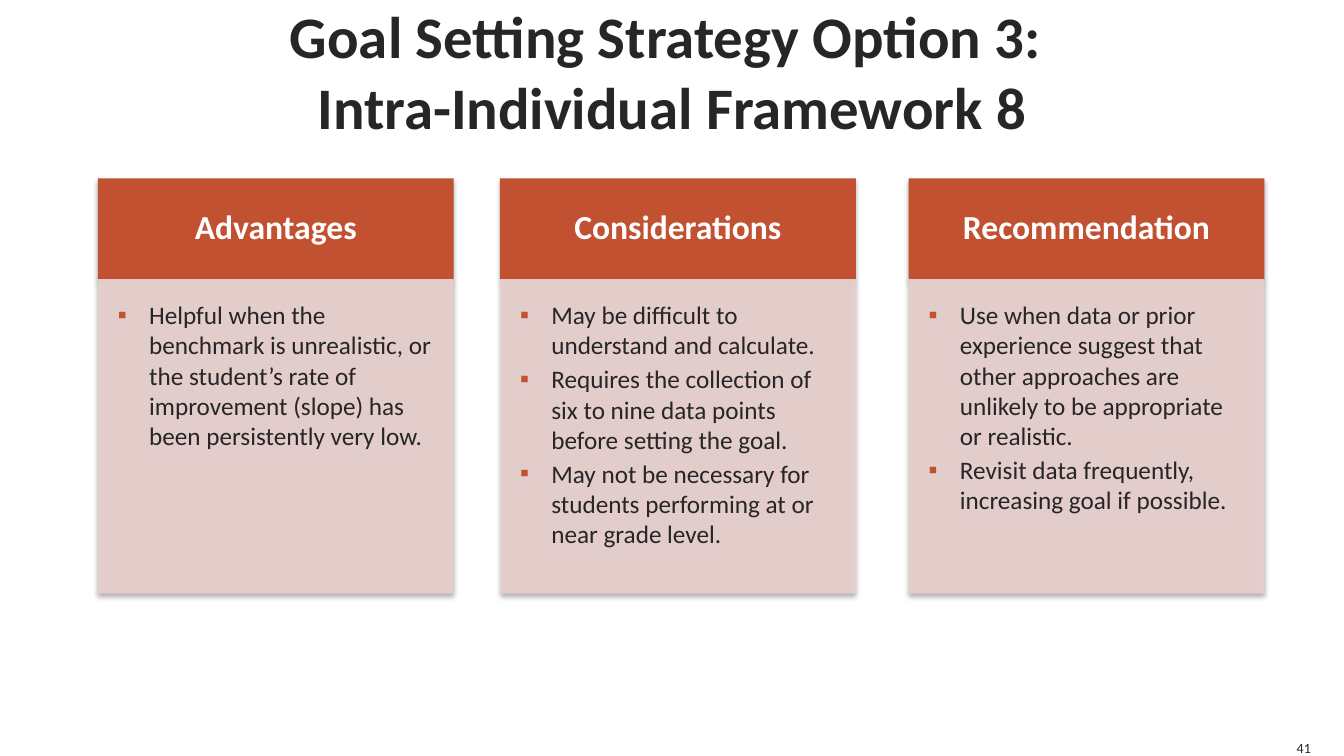
from dataclasses import dataclass

from lxml.etree import SubElement
from pptx import Presentation
from pptx.dml.color import RGBColor
from pptx.enum.shapes import MSO_SHAPE as Preset
from pptx.enum.text import MSO_ANCHOR as Anchor, MSO_AUTO_SIZE as AutoSize, PP_ALIGN as Align
from pptx.oxml.ns import qn
from pptx.shapes.autoshape import Shape
from pptx.slide import Slide
from pptx.text.text import TextFrame, _Paragraph as Paragraph
from pptx.util import Inches, Length, Pt

SLIDE_WIDTH, SLIDE_HEIGHT = Inches(13.33), Inches(7.5)
FONT = "Calibri"
INK = RGBColor(0x26, 0x26, 0x26)
WHITE = RGBColor(0xFF, 0xFF, 0xFF)
RUST = RGBColor(0xC2, 0x51, 0x31)
BLUSH = RGBColor(0xE9, 0xD0, 0xCE)
BULLET_INDENT = Inches(0.31)


@dataclass(frozen=True)
class Area:
    """A rectangle in percent of the slide's width and height."""
    left: float
    top: float
    width: float
    height: float

    def lengths(self) -> tuple[Length, Length, Length, Length]:
        return (Length(round(SLIDE_WIDTH * self.left / 100)),
                Length(round(SLIDE_HEIGHT * self.top / 100)),
                Length(round(SLIDE_WIDTH * self.width / 100)),
                Length(round(SLIDE_HEIGHT * self.height / 100)))


@dataclass(frozen=True)
class Card:
    left: float
    heading: str
    points: tuple[str, ...]


CARD_WIDTH = 26.48
HEADING_TOP, HEADING_HEIGHT, BODY_HEIGHT = 23.6, 13.33, 41.6
TITLE_AREA = Area(3.75, 0, 92.5, 18.67)
NUMBER_AREA = Area(96.25, 97.73, 1.28, 2.27)
TITLE_LINES = ("Goal Setting Strategy Option 3: ", "Intra-Individual Framework 8")
CARDS = (
    Card(7.28, "Advantages", (
        "Helpful when the benchmark is unrealistic, or the student’s rate of "
        "improvement (slope) has been persistently very low.",
    )),
    Card(37.2, "Considerations", (
        "May be difficult to understand and calculate.",
        "Requires the collection of six to nine data points before setting the goal.",
        "May not be necessary for students performing at or near grade level.",
    )),
    Card(67.6, "Recommendation", (
        "Use when data or prior experience suggest that other approaches are "
        "unlikely to be appropriate or realistic.",
        "Revisit data frequently, increasing goal if possible.",
    )),
)


def add_span(para: Paragraph, text: str, size: float, color: RGBColor,
             bold: bool = False) -> None:
    span = para.add_run()
    span.text = text
    span.font.name = FONT
    span.font.size = Pt(size)
    span.font.bold = bold
    span.font.color.rgb = color


def set_frame(frame: TextFrame, anchor: Anchor, left: float = 0, top: float = 0,
              right: float = 0, bottom: float = 0) -> None:
    """Set the anchor and the inner margins in inches."""
    frame.word_wrap = True
    frame.vertical_anchor = anchor
    frame.margin_left, frame.margin_top = Inches(left), Inches(top)
    frame.margin_right, frame.margin_bottom = Inches(right), Inches(bottom)


def add_soft_shadow(shape: Shape) -> None:
    shape.shadow.inherit = False
    effects = shape._element.spPr.find(qn("a:effectLst"))
    shadow = SubElement(effects, qn("a:outerShdw"), blurRad=str(Pt(3.5)),
                        dist=str(Pt(2.2)), dir="5400000", rotWithShape="0")
    black = SubElement(shadow, qn("a:srgbClr"), val="000000")
    SubElement(black, qn("a:alpha"), val="32000")


def add_panel(page: Slide, area: Area, color: RGBColor) -> Shape:
    panel = page.shapes.add_shape(Preset.RECTANGLE, *area.lengths())
    panel.fill.solid()
    panel.fill.fore_color.rgb = color
    panel.line.fill.background()
    add_soft_shadow(panel)
    return panel


def add_bullet(para: Paragraph) -> None:
    properties = para._p.get_or_add_pPr()
    properties.set("marL", str(BULLET_INDENT))
    properties.set("indent", str(-BULLET_INDENT))
    color = SubElement(properties, qn("a:buClr"))
    SubElement(color, qn("a:srgbClr"), val=str(RUST))
    SubElement(properties, qn("a:buFont"), typeface=FONT)
    SubElement(properties, qn("a:buChar"), char="▪")


def add_card(page: Slide, card: Card) -> None:
    heading = add_panel(page, Area(card.left, HEADING_TOP, CARD_WIDTH, HEADING_HEIGHT), RUST)
    set_frame(heading.text_frame, Anchor.MIDDLE, 0.19, 0.11, 0.19, 0.11)
    para = heading.text_frame.paragraphs[0]
    para.alignment = Align.CENTER
    para.line_spacing = 0.9
    add_span(para, card.heading, 24, WHITE, bold=True)

    body_top = HEADING_TOP + HEADING_HEIGHT
    body = add_panel(page, Area(card.left, body_top, CARD_WIDTH, BODY_HEIGHT), BLUSH)
    fill_color = body._element.spPr.find(qn("a:solidFill"))[0]
    SubElement(fill_color, qn("a:alpha"), val="90000")
    frame = body.text_frame
    set_frame(frame, Anchor.TOP, 0.2, 0.2, 0.14, 0.16)
    for index, point in enumerate(card.points):
        para = frame.add_paragraph() if index else frame.paragraphs[0]
        para.alignment = Align.LEFT
        para.space_after = Pt(2.7)
        add_bullet(para)
        add_span(para, point, 18, INK)


def add_title(page: Slide) -> None:
    box = page.shapes.add_textbox(*TITLE_AREA.lengths())
    set_frame(box.text_frame, Anchor.MIDDLE)
    para = box.text_frame.paragraphs[0]
    para.alignment = Align.CENTER
    for index, line in enumerate(TITLE_LINES):
        if index:
            para.add_line_break()
        add_span(para, line, 42, INK, bold=True)


def add_page_number(page: Slide) -> None:
    box = page.shapes.add_textbox(*NUMBER_AREA.lengths())
    set_frame(box.text_frame, Anchor.BOTTOM)
    box.text_frame.word_wrap = False
    box.text_frame.auto_size = AutoSize.SHAPE_TO_FIT_TEXT
    para = box.text_frame.paragraphs[0]
    para.alignment = Align.RIGHT
    add_span(para, "41", 10, INK)


def main() -> None:
    deck = Presentation()
    deck.slide_width, deck.slide_height = SLIDE_WIDTH, SLIDE_HEIGHT
    page = deck.slides.add_slide(deck.slide_layouts[6])
    add_title(page)
    for card in CARDS:
        add_card(page, card)
    add_page_number(page)
    deck.save("out.pptx")


if __name__ == "__main__":
    main()
